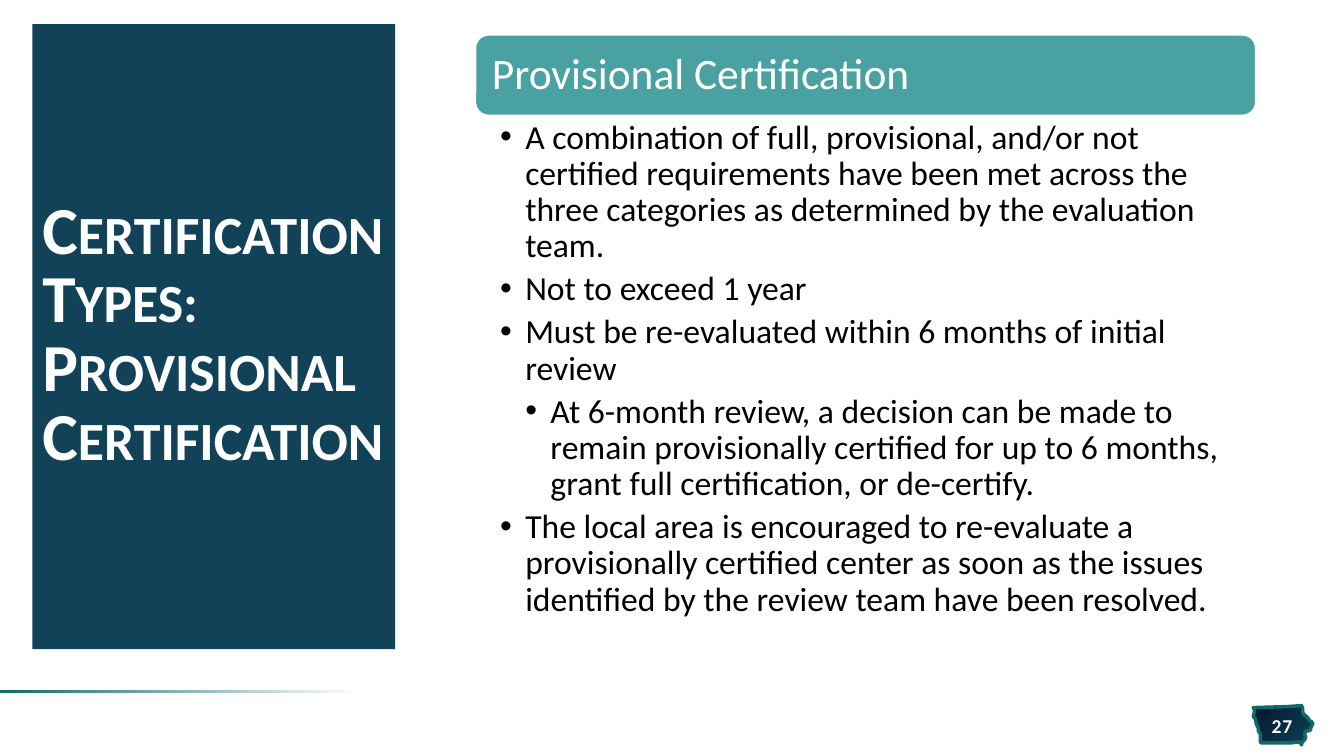
from dataclasses import dataclass

from lxml.etree import SubElement
from pptx import Presentation
from pptx.dml.color import RGBColor
from pptx.enum.shapes import MSO_SHAPE
from pptx.enum.text import MSO_ANCHOR, MSO_AUTO_SIZE, PP_ALIGN
from pptx.oxml.ns import qn
from pptx.util import Pt

PX = 9144  # EMU per px, 100 px to the inch


@dataclass(frozen=True)
class Theme:
    font: str = "Calibri"
    navy: str = "114257"
    midnight: str = "00162E"
    deep_teal: str = "0F6A6B"
    teal: str = "49A1A2"
    white: str = "FFFFFF"
    black: str = "000000"
    title_pt: int = 48
    heading_pt: int = 31
    body_pt: int = 24
    number_pt: int = 14


@dataclass(frozen=True)
class Box:
    left: int
    top: int
    width: int
    height: int

    def emu(self) -> tuple[int, ...]:
        return tuple(v * PX for v in (self.left, self.top, self.width, self.height))


@dataclass(frozen=True)
class Bullet:
    text: str
    level: int = 1


THEME = Theme()
BULLETS = [
    Bullet("A combination of full, provisional, and/or not certified requirements have been met "
           "across the three categories as determined by the evaluation team."),
    Bullet("Not to exceed 1 year"),
    Bullet("Must be re-evaluated within 6 months of initial review"),
    Bullet("At 6-month review, a decision can be made to remain provisionally certified for up to "
           "6 months, grant full certification, or de-certify.", level=2),
    Bullet("The local area is encouraged to re-evaluate a provisionally certified center as soon as "
           "the issues identified by the review team have been resolved."),
]
BADGE_OUTLINE = [
    (1291, 700), (1277, 701), (1243, 702), (1244, 704), (1244, 707), (1243, 711), (1245, 713),
    (1246, 718), (1248, 722), (1248, 725), (1250, 728), (1250, 736), (1251, 737), (1280, 737),
    (1289, 736), (1291, 739), (1291, 737), (1294, 734), (1295, 731), (1294, 728), (1295, 725),
    (1298, 725), (1300, 724), (1300, 722), (1302, 718), (1301, 716), (1299, 715), (1297, 712),
    (1295, 710), (1293, 709), (1292, 706), (1292, 702), (1291, 701),
]


def rgb(color: str) -> RGBColor:
    return RGBColor.from_string(color)


def set_frame(tf, insets: tuple[int, int, int, int], anchor=MSO_ANCHOR.MIDDLE) -> None:
    """Wrap text, with insets in px: left, top, right, bottom."""
    tf.word_wrap = True
    tf.auto_size = MSO_AUTO_SIZE.NONE
    tf.vertical_anchor = anchor
    tf.margin_left, tf.margin_top, tf.margin_right, tf.margin_bottom = (v * PX for v in insets)


def write(p, text: str, *, size: int, color: str, bold: bool = False, align=PP_ALIGN.LEFT,
          line: float = 1.0, after: float = 0, small_caps: bool = False, spacing: int = 0) -> None:
    """Put text in a paragraph; a newline becomes a line break."""
    p.text = text.replace("\n", "\v")
    p.alignment, p.line_spacing = align, line
    p.space_before, p.space_after = Pt(0), Pt(after)
    for r in p.runs:
        r.font.name, r.font.size, r.font.bold = THEME.font, Pt(size), bold
        r.font.color.rgb = rgb(color)
        if small_caps:
            r.font._element.set("cap", "small")
        if spacing:
            r.font._element.set("spc", str(spacing))


def add_bullet(p, level: int) -> None:
    pPr = p._p.get_or_add_pPr()
    pPr.set("marL", str(level * 25 * PX))
    pPr.set("indent", str(-25 * PX))
    SubElement(pPr, qn("a:buFont"), typeface="Arial")
    SubElement(pPr, qn("a:buChar"), char="•")


def fill_gradient(s, angle: int, *stops: tuple[float, str]) -> None:
    s.fill.gradient()
    s.fill.gradient_angle = angle
    for stop, (position, color) in zip(s.fill.gradient_stops, stops):
        stop.position = position
        stop.color.rgb = rgb(color)


def add_box(slide, kind, box: Box):
    s = slide.shapes.add_shape(kind, *box.emu())
    s.shadow.inherit = False
    s.line.fill.background()
    return s


def add_title(slide) -> None:
    s = slide.shapes.title
    s.left, s.top, s.width, s.height = Box(32, 24, 360, 620).emu()
    s.fill.solid()
    s.fill.fore_color.rgb = rgb(THEME.navy)
    set_frame(s.text_frame, (10, 5, 10, 5))
    write(s.text_frame.paragraphs[0], "Certification Types:\nProvisional Certification",
          size=THEME.title_pt, color=THEME.white, bold=True, line=0.85, small_caps=True)


def add_heading(slide) -> None:
    s = add_box(slide, MSO_SHAPE.ROUNDED_RECTANGLE, Box(471, 34, 775, 81))
    s.fill.solid()
    s.fill.fore_color.rgb = rgb(THEME.teal)
    s.line.color.rgb = rgb(THEME.white)
    s.line.width = Pt(2)
    set_frame(s.text_frame, (13, 13, 13, 13))
    write(s.text_frame.paragraphs[0], "Provisional Certification",
          size=THEME.heading_pt, color=THEME.white, line=0.9)


def add_bullets(slide) -> None:
    tf = slide.shapes.add_textbox(*Box(471, 115, 775, 519).emu()).text_frame
    set_frame(tf, (25, 4, 24, 4), MSO_ANCHOR.TOP)
    for i, bullet in enumerate(BULLETS):
        p = tf.add_paragraph() if i else tf.paragraphs[0]
        p.level = bullet.level
        add_bullet(p, bullet.level)
        write(p, bullet.text, size=THEME.body_pt, color=THEME.black, line=0.9,
              after=0.2 * THEME.body_pt)


def add_footer(slide) -> None:
    """Draw the fading rule and the page-number badge."""
    rule = add_box(slide, MSO_SHAPE.RECTANGLE, Box(0, 685, 380, 3))
    fill_gradient(rule, 180, (0.06, THEME.white), (1, THEME.deep_teal))

    start, *rest = BADGE_OUTLINE
    builder = slide.shapes.build_freeform(*start, scale=PX)
    builder.add_line_segments(rest, close=True)
    badge = builder.convert_to_shape()
    badge.shadow.inherit = False
    fill_gradient(badge, 315, (0, THEME.midnight), (1, THEME.navy))
    badge.line.color.rgb = rgb(THEME.deep_teal)
    badge.line.width = Pt(2.5)

    tf = slide.shapes.add_textbox(*Box(1246, 708, 51, 23).emu()).text_frame
    set_frame(tf, (0, 5, 0, 5))
    write(tf.paragraphs[0], "27", size=THEME.number_pt, color=THEME.white, bold=True,
          align=PP_ALIGN.CENTER, spacing=50)


def main() -> None:
    prs = Presentation()
    prs.slide_width, prs.slide_height = 1333 * PX, 750 * PX
    slide = prs.slides.add_slide(prs.slide_layouts.get_by_name("Title Only"))
    add_title(slide)
    add_heading(slide)
    add_bullets(slide)
    add_footer(slide)
    prs.save("out.pptx")


if __name__ == "__main__":
    main()
